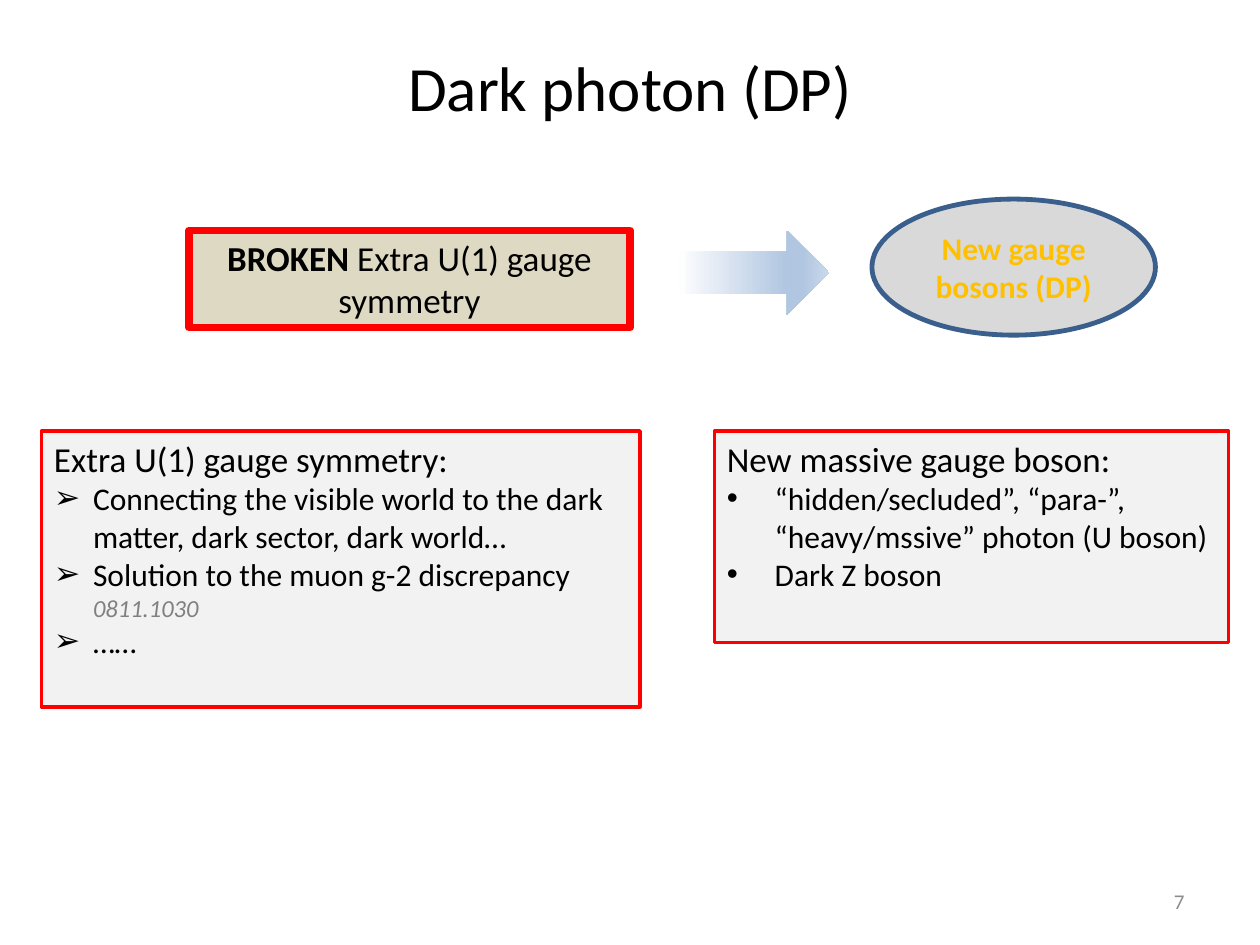
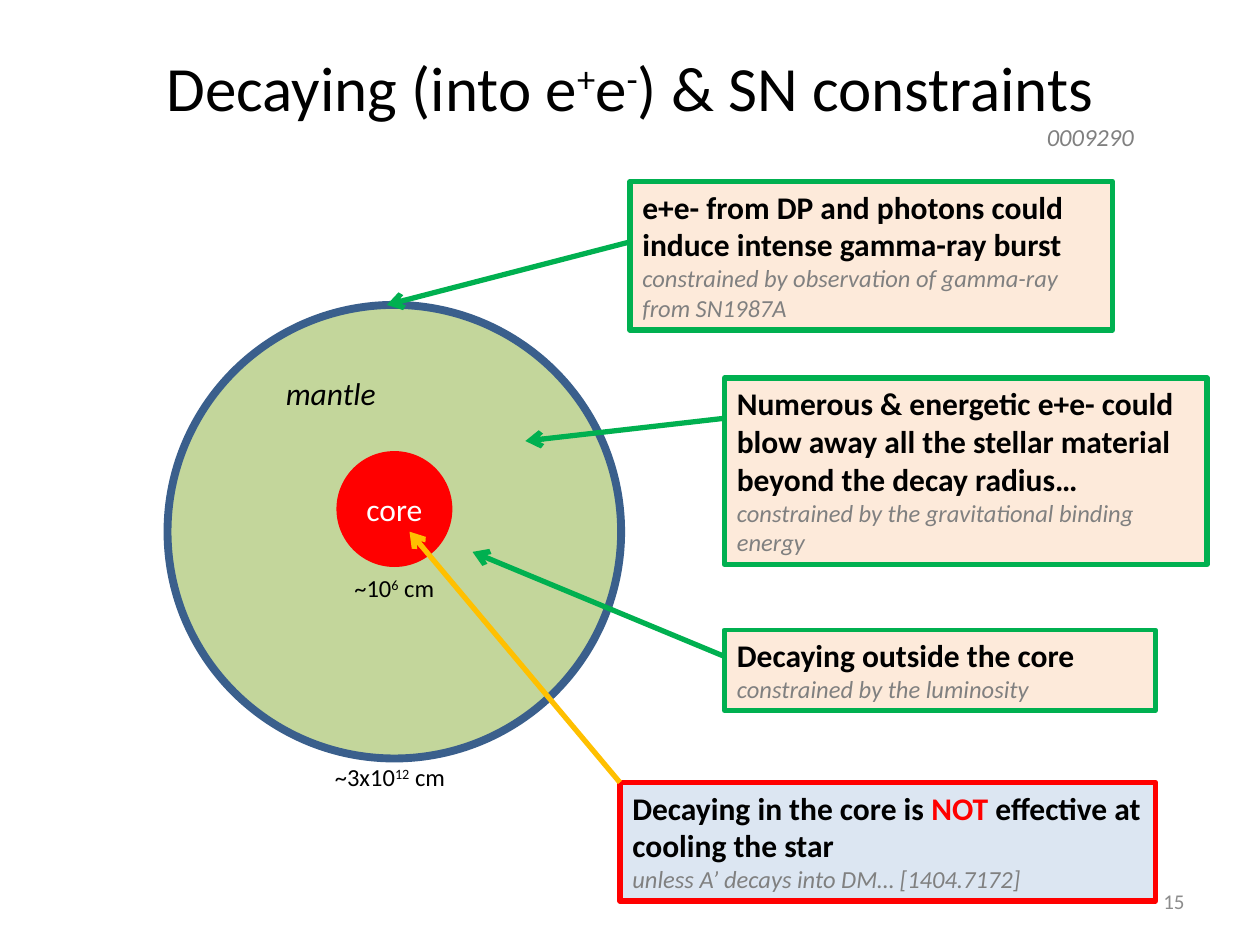
"""Build two slides on dark photons and supernova constraints."""
import copy

import pptx
import pptx.dml.color
import pptx.enum.shapes
import pptx.enum.text
import pptx.oxml
import pptx.oxml.ns
import pptx.util

Inches, Pt = pptx.util.Inches, pptx.util.Pt
RGB = pptx.dml.color.RGBColor
SHAPE = pptx.enum.shapes.MSO_SHAPE
ALIGN = pptx.enum.text.PP_ALIGN
ANCHOR = pptx.enum.text.MSO_ANCHOR

FONT = "Calibri"
BLACK, WHITE, RED = RGB(0, 0, 0), RGB(255, 255, 255), RGB(255, 0, 0)
GREY, NUMBER_GREY = RGB(0x80, 0x80, 0x80), RGB(0x8C, 0x8C, 0x8C)
GREEN, GOLD, NAVY = RGB(0, 0xB0, 0x50), RGB(0xFF, 0xC0, 0), RGB(0x3A, 0x5F, 0x8C)
SAND, SILVER, MIST = RGB(0xDD, 0xD9, 0xC3), RGB(0xD9, 0xD9, 0xD9), RGB(0xF2, 0xF2, 0xF2)
PEACH, ICE, MANTLE = RGB(0xFD, 0xEA, 0xDA), RGB(0xDC, 0xE6, 0xF2), RGB(0xC3, 0xD6, 0x9B)
ARROW_STOPS = [(0.03, WHITE), (0.74, RGB(0xB0, 0xC6, 0xE1)),
               (0.83, RGB(0xB0, 0xC6, 0xE1)), (1, RGB(0xCA, 0xD9, 0xEB))]

STYLES = {
    "title": (BLACK, {"size": Pt(36)}),
    "number": (NUMBER_GREY, {"size": Pt(12)}),
    "lead": (BLACK, {"size": Pt(20)}),
    "lead bold": (BLACK, {"size": Pt(20), "bold": True}),
    "item": (BLACK, {"size": Pt(18)}),
    "claim": (BLACK, {"size": Pt(18), "bold": True}),
    "alert": (RED, {"size": Pt(18), "bold": True}),
    "boson": (GOLD, {"size": Pt(18), "bold": True}),
    "core": (WHITE, {"size": Pt(18)}),
    "mantle": (BLACK, {"size": Pt(18), "italic": True}),
    "scale": (BLACK, {"size": Pt(14)}),
    "note": (GREY, {"size": Pt(14), "italic": True}),
}

TITLE_AT = (0.5, 0.17, 9, 1.03)
NUMBER_AT = (7.17, 6.95, 2.33, 0.4)
PHOTON_TITLE = [("Dark photon (DP)", "title")]
DECAY_TITLE = [("Decaying (into e", "title"), ("^+", "title"), ("e", "title"),
               ("^-", "title"), (") & SN constraints", "title")]

BROKEN_SYMMETRY = [[("BROKEN ", "lead bold"), ("Extra U(1) gauge symmetry", "lead")]]
NEW_BOSONS = [[("New gauge bosons (DP)", "boson")]]
TOPICS = [
    ((0.33, 3.42, 4.75, 2.19), "➢", 0.31, [
        [("Extra U(1) gauge symmetry:", "lead")],
        [("Connecting the visible world to the dark matter, dark sector, dark world…", "item")],
        [("Solution to the muon g-2 discrepancy ", "item"), ("0811.1030", "note")],
        [("……", "item")]]),
    ((5.67, 3.42, 4.08, 1.68), "•", 0.38, [
        [("New massive gauge boson:", "lead")],
        [("“hidden/secluded”, “para-”, “heavy/mssive” photon (U boson)", "item")],
        [("Dark Z boson", "item")]]),
]

CONSTRAINTS = [
    ((4.92, 6.21, 4.25, 0.94), ICE, RED, 3.25, [
        [("Decaying in the core is ", "claim"), ("NOT", "alert"),
         (" effective at cooling the star", "claim")],
        [("unless A’ decays into DM… [1404.7172]", "note")]]),
    ((5.75, 5, 3.42, 0.64), PEACH, GREEN, 2.75, [
        [("Decaying outside the core", "claim"),
         ("\nconstrained by the luminosity", "note")]]),
    ((5.75, 3, 3.83, 1.48), PEACH, GREEN, 3, [
        [("Numerous & energetic e+e- could blow away all the stellar material "
          "beyond the decay radius…", "claim"),
         ("\nconstrained by the gravitational binding energy", "note")]]),
    ((5, 1.44, 3.83, 1.18), PEACH, GREEN, 3, [
        [("e+e- from DP and photons could induce intense gamma-ray burst", "claim")],
        [("constrained by observation of gamma-ray from SN1987A", "note")]]),
]
STAR_LABELS = [
    ((2.17, 2.92, 1.75, 0.4), ALIGN.LEFT, [[("mantle", "mantle")]]),
    ((2.68, 4.5, 0.9, 0.34), ALIGN.CENTER,
     [[("~10", "scale"), ("^6", "scale"), (" cm", "scale")]]),
    ((2.52, 6, 1.15, 0.34), ALIGN.CENTER,
     [[("~3x10", "scale"), ("^12", "scale"), (" cm", "scale")]]),
]
POINTERS = [
    ((4.92, 6.21), (3.25, 4.22), GOLD),
    ((5.75, 5.21), (3.75, 4.38), GREEN),
    ((5.75, 3.32), (4.17, 3.5), GREEN),
    ((5, 1.92), (3.07, 2.42), GREEN),
]


def add_xml(parent, tag, **attributes):
    """Append a drawing element with the given attributes."""
    child = pptx.oxml.ns.qn(f"a:{tag}")
    element = parent.makeelement(child, attributes)
    parent.append(element)


def write_runs(paragraph, runs):
    """Write styled runs; ^ raises a run and a leading newline breaks the line."""
    for text, style in runs:
        if text.startswith("\n"):
            paragraph.add_line_break()
        run = paragraph.add_run()
        run.text = text.lstrip("\n^")
        color, formats = STYLES[style]
        run.font.name = FONT
        run.font.color.rgb = color
        for key, value in formats.items():
            setattr(run.font, key, value)
        if text.startswith("^"):
            run.font._element.set("baseline", "30000")


def write(shape, paragraphs, align=ALIGN.LEFT, anchor=ANCHOR.TOP, wrap=True):
    """Fill a shape with paragraphs."""
    frame = shape.text_frame
    for key, value in {"word_wrap": wrap, "vertical_anchor": anchor}.items():
        setattr(frame, key, value)
    for index, runs in enumerate(paragraphs):
        paragraph = frame.add_paragraph() if index else frame.paragraphs[0]
        paragraph.alignment = align
        write_runs(paragraph, runs)


def add_label(shapes, at, paragraphs, **layout):
    """Add a text box."""
    write(shapes.add_textbox(*map(Inches, at)), paragraphs, **layout)


def add_panel(shapes, kind, at, fill=None, line=None, width=0):
    """Add a preset shape with flat fill and outline."""
    panel = shapes.add_shape(kind, *map(Inches, at))
    panel.shadow.inherit = False
    if fill is not None:
        panel.fill.solid()
        panel.fill.fore_color.rgb = fill
    if line is None:
        panel.line.fill.background()
    else:
        panel.line.color.rgb = line
        panel.line.width = Pt(width)
    return panel


def add_bullets(panel, bullet, indent):
    """Bullet every paragraph after the heading."""
    for paragraph in panel.text_frame.paragraphs[1:]:
        properties = paragraph._p.get_or_add_pPr()
        properties.set("marL", str(Inches(indent)))
        properties.set("indent", str(-Inches(indent)))
        add_xml(properties, "buFont", typeface="Arial")
        add_xml(properties, "buChar", char=bullet)


def add_pointer(shapes, start, end, color):
    """Add a line with an open arrowhead at its end."""
    pointer = shapes.add_connector(
        pptx.enum.shapes.MSO_CONNECTOR.STRAIGHT, *map(Inches, start + end))
    pointer.line.color.rgb = color
    pointer.line.width = Pt(3)
    add_xml(pointer.line._get_or_add_ln(), "tailEnd", type="arrow")
    add_xml(pointer._element.spPr, "effectLst")


def add_slide(deck, title, number):
    """Add a slide with the shared title and page number."""
    slide = deck.slides.add_slide(deck.slide_layouts[5])
    heading = slide.shapes.title
    for key, value in zip(("left", "top", "width", "height"), TITLE_AT):
        setattr(heading, key, Inches(value))
    write(heading, [title], ALIGN.CENTER, ANCHOR.MIDDLE)
    add_label(slide.shapes, NUMBER_AT, [[(number, "number")]],
              align=ALIGN.RIGHT, anchor=ANCHOR.MIDDLE)
    return slide.shapes


def build_photon(deck):
    """Build the dark photon slide."""
    shapes = add_slide(deck, PHOTON_TITLE, "7")
    symmetry = add_panel(shapes, SHAPE.RECTANGLE, (1.5, 1.83, 3.5, 0.77), SAND, RED, 4.5)
    write(symmetry, BROKEN_SYMMETRY, ALIGN.CENTER)

    leads_to = add_panel(shapes, SHAPE.STRIPED_RIGHT_ARROW, (5.33, 1.83, 1.25, 0.67))
    leads_to.fill.gradient()
    leads_to.fill.gradient_angle = 0
    stops = next(leads_to._element.iter(pptx.oxml.ns.qn("a:gsLst")))
    for stop in list(stops):
        stops.append(copy.deepcopy(stop))
    for stop, (position, color) in zip(leads_to.fill.gradient_stops, ARROW_STOPS):
        stop.position = position
        stop.color.rgb = color

    bosons = add_panel(shapes, SHAPE.OVAL, (6.92, 1.58, 2.25, 1.08), SILVER, NAVY, 2.75)
    write(bosons, NEW_BOSONS, ALIGN.CENTER, ANCHOR.MIDDLE)
    for at, bullet, indent, paragraphs in TOPICS:
        topic = add_panel(shapes, SHAPE.RECTANGLE, at, MIST, RED, 2)
        write(topic, paragraphs)
        add_bullets(topic, bullet, indent)


def build_decay(deck):
    """Build the supernova constraints slide."""
    shapes = add_slide(deck, DECAY_TITLE, "15")
    *lower, burst = CONSTRAINTS

    def add_constraint(at, fill, line, width, paragraphs):
        write(add_panel(shapes, SHAPE.RECTANGLE, at, fill, line, width), paragraphs)

    for constraint in lower:
        add_constraint(*constraint)
    star = shapes.add_group_shape().shapes
    add_panel(star, SHAPE.OVAL, (1.33, 2.42, 3.6, 3.6), MANTLE, NAVY, 4.5)
    core = add_panel(star, SHAPE.OVAL, (2.67, 3.58, 0.92, 0.92), RED)
    write(core, [[("core", "core")]], ALIGN.CENTER, ANCHOR.MIDDLE)
    for at, align, paragraphs in STAR_LABELS:
        add_label(star, at, paragraphs, align=align)
    add_constraint(*burst)
    for pointer in POINTERS:
        add_pointer(shapes, *pointer)
    add_label(shapes, (8.21, 0.92, 0.9, 0.34), [[("0009290", "note")]], wrap=False)


def main():
    """Build and save the deck."""
    deck = pptx.Presentation()
    deck.slide_width, deck.slide_height = Inches(10), Inches(7.5)
    build_photon(deck)
    build_decay(deck)
    deck.save("out.pptx")


if __name__ == "__main__":
    main()
